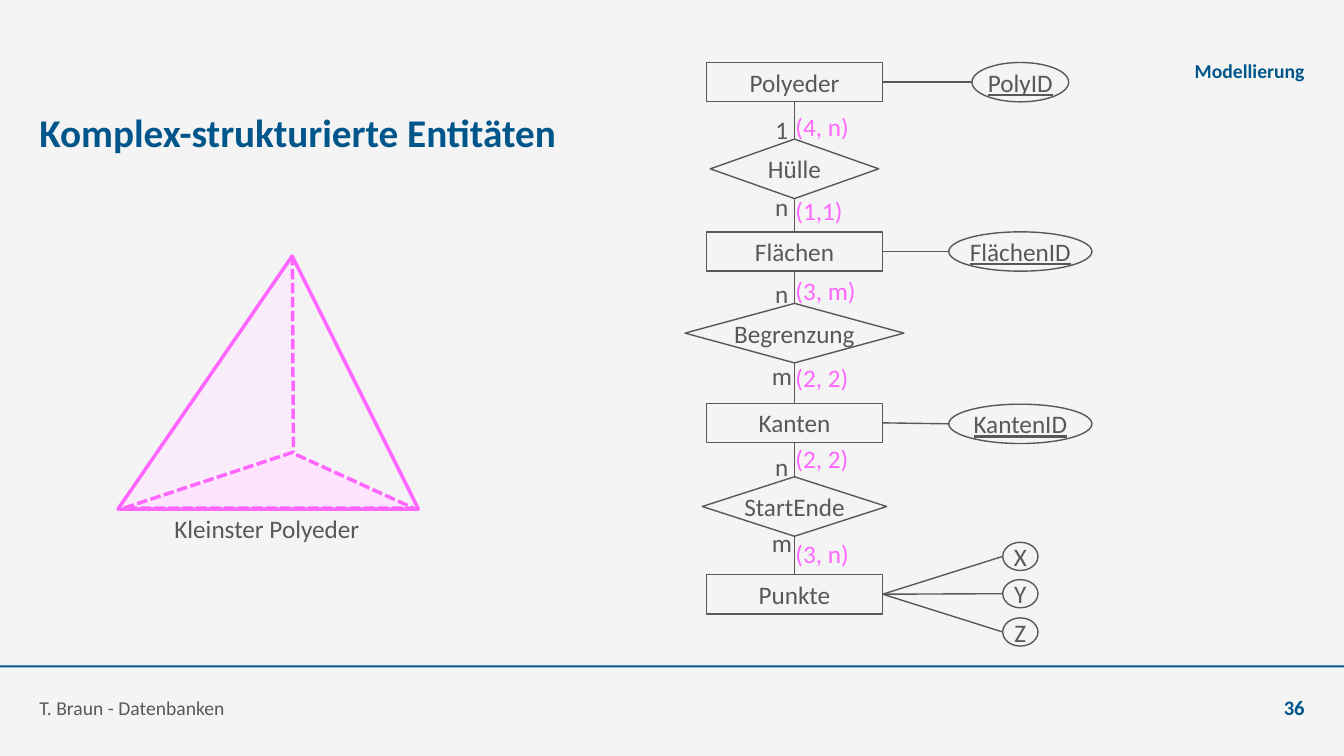
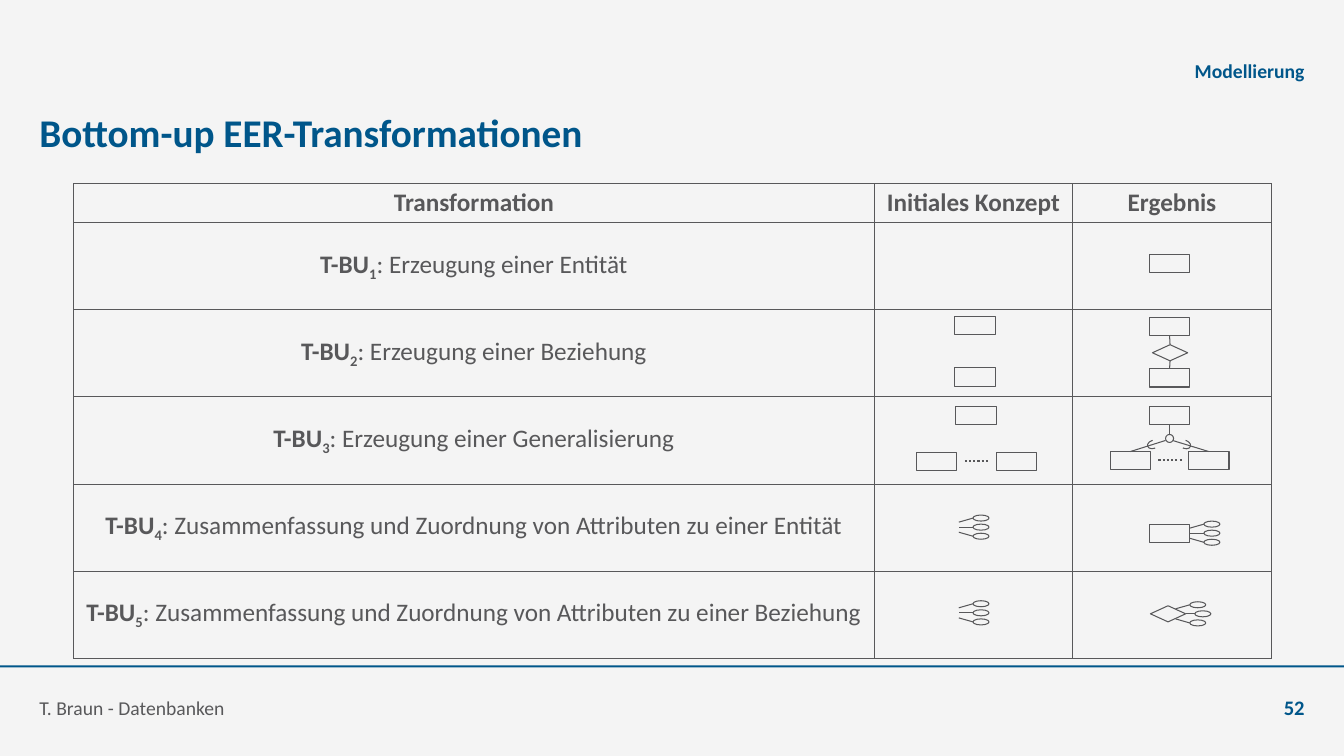
from lxml.etree import SubElement
from pptx import Presentation
from pptx.dml.color import RGBColor
from pptx.enum.dml import MSO_LINE_DASH_STYLE as DASH, MSO_PATTERN_TYPE as PATTERN
from pptx.enum.shapes import MSO_CONNECTOR, MSO_SHAPE as SHAPE
from pptx.enum.text import MSO_ANCHOR as ANCHOR, PP_ALIGN as ALIGN
from pptx.oxml.ns import qn
from pptx.util import Inches, Pt

FONT = "Calibri"
PAPER, BLUE, INK = "F4F4F4", "00568A", "58585A"
PINK, PALE_PINK = "FF66FF", "FFE4FF"
rgb = RGBColor.from_string


def put(slide, kind, left, top, width, height, text="", size=18, color=INK,
        bold=False, underline=False, align=ALIGN.CENTER, anchor=ANCHOR.MIDDLE,
        line=INK, weight=1.0, fill=None):
    """Add a preset shape, or a text box when kind is None."""
    box = [Inches(value) for value in (left, top, width, height)]
    if kind is None:
        shape = slide.shapes.add_textbox(*box)
    else:
        shape = slide.shapes.add_shape(kind, *box)
        shape.shadow.inherit = False
        if fill:
            shape.fill.solid()
            shape.fill.fore_color.rgb = rgb(fill)
        else:
            shape.fill.background()
        if line:
            shape.line.color.rgb = rgb(line)
            shape.line.width = Pt(weight)
        else:
            shape.line.fill.background()
    if text:
        frame = shape.text_frame
        frame.margin_left = frame.margin_right = frame.margin_top = frame.margin_bottom = 0
        frame.word_wrap = kind is None
        frame.vertical_anchor = anchor
        paragraph = frame.paragraphs[0]
        paragraph.alignment = align
        run = paragraph.add_run()
        run.text = text
        font = run.font
        font.name, font.size, font.bold, font.underline = FONT, Pt(size), bold, underline
        font.color.rgb = rgb(color)
    return shape


def add_line(slide, x1, y1, x2, y2, weight=1.0, color=INK, dash=None):
    connector = slide.shapes.add_connector(
        MSO_CONNECTOR.STRAIGHT, Inches(x1), Inches(y1), Inches(x2), Inches(y2))
    connector.line.color.rgb = rgb(color)
    connector.line.width = Pt(weight)
    if dash:
        connector.line.dash_style = dash
    SubElement(connector.element.spPr, qn("a:effectLst"))
    return connector


presentation = Presentation()
presentation.slide_width, presentation.slide_height = Inches(13.33), Inches(7.5)
background = presentation.slide_master.background.fill
background.solid()
background.fore_color.rgb = rgb(PAPER)

# Shared frame: band, title, chapter, footer, number
slides = []
for title_text, number in (("Komplex-strukturierte Entitäten", "36"),
                           ("Bottom-up EER-Transformationen", "52")):
    slide = presentation.slides.add_slide(presentation.slide_layouts[5])
    slides.append(slide)
    put(slide, SHAPE.RECTANGLE, 0, 6.6, 13.33, 0.02, line=None, fill=BLUE)
    title = slide.shapes.title
    title.left, title.top = Inches(0.39), Inches(0.99)
    title.width, title.height = Inches(12.55), Inches(0.63)
    frame = title.text_frame
    frame.margin_left = frame.margin_right = frame.margin_top = frame.margin_bottom = 0
    frame.vertical_anchor = ANCHOR.MIDDLE
    paragraph = frame.paragraphs[0]
    paragraph.alignment = ALIGN.LEFT
    run = paragraph.add_run()
    run.text = title_text
    run.font.name, run.font.size, run.font.bold = FONT, Pt(28), True
    run.font.color.rgb = rgb(BLUE)
    put(slide, None, 3.93, 0.43, 9.01, 0.39, "Modellierung", 14, BLUE, True,
        align=ALIGN.RIGHT, anchor=ANCHOR.BOTTOM)
    put(slide, None, 0.39, 6.75, 9.2, 0.39, "T. Braun - Datenbanken", 14,
        align=ALIGN.LEFT, anchor=ANCHOR.BOTTOM)
    put(slide, None, 12.15, 6.75, 0.79, 0.39, number, 14.7, BLUE, True,
        align=ALIGN.RIGHT, anchor=ANCHOR.BOTTOM)
polyhedron_slide, transformation_slide = slides

# Slide 1: tetrahedron, shaded faces first
slide = polyhedron_slide
for left, top, width, height, rotation, apex, pattern in (
        (1.8, 3.58, 2.72, 0.84, 243, 0.37, PATTERN.LARGE_CONFETTI),
        (1.01, 3.56, 2.97, 1.1, 124.5, 0.53, PATTERN.LIGHT_VERTICAL)):
    face = put(slide, SHAPE.ISOSCELES_TRIANGLE, left, top, width, height, line=None)
    face.adjustments[0] = apex
    face.rotation = rotation
    face.fill.patterned()
    face.fill.pattern = pattern
    face.fill.fore_color.rgb = rgb(PALE_PINK)
    face.fill.back_color.rgb = rgb(PAPER)
base = put(slide, SHAPE.ISOSCELES_TRIANGLE, 1.23, 4.49, 2.87, 0.55,
           line=PINK, weight=2.5, fill=PALE_PINK)
base.adjustments[0] = 0.58
base.line.dash_style = DASH.SQUARE_DOT
outline = put(slide, SHAPE.ISOSCELES_TRIANGLE, 1.17, 2.54, 2.98, 2.51, line=PINK, weight=2.5)
outline.adjustments[0] = 0.58
add_line(slide, 2.9, 2.53, 2.91, 4.49, 2.5, PINK, DASH.SQUARE_DOT)
put(slide, None, 1.73, 5.04, 2.06, 0.4, "Kleinster Polyeder", align=ALIGN.LEFT)

# Slide 1: chain of entities and relationships
axis = 7.88
chain = []
for name, kind, top, width, height in (
        ("Polyeder", SHAPE.RECTANGLE, 0.62, 1.75, 0.39),
        ("Hülle", SHAPE.DIAMOND, 1.38, 1.67, 0.59),
        ("Flächen", SHAPE.RECTANGLE, 2.3, 1.75, 0.39),
        ("Begrenzung", SHAPE.DIAMOND, 3.01, 2.17, 0.59),
        ("Kanten", SHAPE.RECTANGLE, 4, 1.75, 0.39),
        ("StartEnde", SHAPE.DIAMOND, 4.73, 1.83, 0.59),
        ("Punkte", SHAPE.RECTANGLE, 5.7, 1.75, 0.39)):
    chain.append(put(slide, kind, axis - width / 2, top, width, height, name))
for upper, lower in zip(chain, chain[1:]):
    link = add_line(slide, axis, 0, axis, 1)
    link.begin_connect(lower, 0)
    link.end_connect(upper, 2)

# Slide 1: cardinalities left and right of each link
for count, count_top, interval, interval_top in (
        ("1", 1.08, "(4, n)", 1.05), ("n", 1.85, "(1,1)", 1.89),
        ("n", 2.71, "(3, m)", 2.68), ("m", 3.52, "(2, 2)", 3.54),
        ("n", 4.43, "(2, 2)", 4.35), ("m", 5.18, "(3, n)", 5.29)):
    put(slide, None, 7.57, count_top, 0.37, 0.4, count)
    put(slide, None, 7.89, interval_top, 0.8, 0.4, interval, color=PINK, align=ALIGN.LEFT)

# Slide 1: attributes, keys underlined
polyeder, flaechen, kanten, punkte = chain[::2]
for owner, name, top, width, height, is_key in (
        (polyeder, "PolyID", 0.62, 0.96, 0.39, True),
        (flaechen, "FlächenID", 2.3, 1.42, 0.39, True),
        (kanten, "KantenID", 4.01, 1.42, 0.39, True),
        (punkte, "X", 5.38, 0.35, 0.28, False),
        (punkte, "Y", 5.75, 0.35, 0.28, False),
        (punkte, "Z", 6.13, 0.35, 0.28, False)):
    left = 10.12 - width / 2
    put(slide, SHAPE.OVAL, left, top, width, height, name, underline=is_key)
    add_line(slide, left, top + height / 2, 8.75, 0).end_connect(owner, 3)

# Slide 2: table of transformations
slide = transformation_slide
header = ("Transformation", "Initiales Konzept", "Ergebnis")
steps = (
    "Erzeugung einer Entität",
    "Erzeugung einer Beziehung",
    "Erzeugung einer Generalisierung",
    "Zusammenfassung und Zuordnung von Attributen zu einer Entität",
    "Zusammenfassung und Zuordnung von Attributen zu einer Beziehung")
rows = [[[(text, True, False)] for text in header]]
for index, step in enumerate(steps, 1):
    rows.append([[("T-BU", True, False), (str(index), True, True),
                  (f": {step}", False, False)], [], []])

table = slide.shapes.add_table(
    len(rows), len(header), Inches(0.73), Inches(1.82), Inches(11.87), Inches(4.71)).table
table.first_row = table.horz_banding = False
for column, width in zip(table.columns, (7.94, 1.97, 1.97)):
    column.width = Inches(width)
for index, row in enumerate(table.rows):
    row.height = Inches((4.71 - 0.39) / len(steps) if index else 0.39)
    for cell, runs in zip(row.cells, rows[index]):
        cell.margin_left = cell.margin_right = Inches(0.08)
        cell.margin_top = cell.margin_bottom = Inches(0.04)
        cell.vertical_anchor = ANCHOR.MIDDLE
        properties = cell._tc.get_or_add_tcPr()
        for side in ("a:lnL", "a:lnR", "a:lnT", "a:lnB"):
            border = SubElement(properties, qn(side), w=str(Pt(0.75)))
            SubElement(SubElement(border, qn("a:solidFill")), qn("a:srgbClr"), val=INK)
        cell.fill.background()
        paragraph = cell.text_frame.paragraphs[0]
        paragraph.alignment = ALIGN.CENTER
        for text, bold, subscript in runs:
            run = paragraph.add_run()
            run.text = text
            run.font.name, run.font.size, run.font.bold = FONT, Pt(18), bold
            run.font.color.rgb = rgb(INK)
            if subscript:
                run.font._element.set("baseline", "-25000")

# Slide 2: small entity boxes
thin = 0.75
entities = {}
for name, left, top in (
        ("new entity", 11.4, 2.52),
        ("first input", 9.47, 3.14), ("second input", 9.47, 3.65),
        ("first related", 11.4, 3.15), ("second related", 11.4, 3.66),
        ("loose parent", 9.48, 4.03), ("loose left", 9.09, 4.49), ("loose right", 9.88, 4.49),
        ("parent", 11.4, 4.03), ("left child", 11.01, 4.48), ("right child", 11.79, 4.48),
        ("owner", 11.4, 5.2)):
    entities[name] = put(slide, SHAPE.RECTANGLE, left, top, 0.4, 0.18, weight=thin)

# Slide 2: relationship between two entities
relationship = put(slide, SHAPE.DIAMOND, 11.43, 3.42, 0.35, 0.16, weight=thin)
for upper, lower in ((entities["first related"], relationship),
                     (relationship, entities["second related"])):
    link = add_line(slide, 11.6, 3.33, 11.6, 3.42, thin)
    link.begin_connect(upper, 2)
    link.end_connect(lower, 0)

# Slide 2: generalisation with subset arcs
put(slide, SHAPE.OVAL, 11.56, 4.31, 0.08, 0.08, weight=thin)
add_line(slide, 11.6, 4.31, 11.6, 4.21, thin).end_connect(entities["parent"], 2)
for child, start, arc_left, rotation in (("left child", 11.56, 11.38, 342),
                                         ("right child", 11.63, 11.7, 200)):
    add_line(slide, start, 4.37, 11.6, 4.48, thin).end_connect(entities[child], 0)
    arc = put(slide, SHAPE.ARC, arc_left, 4.37, 0.11, 0.08, weight=thin)
    arc.rotation = rotation
    for index, degrees in enumerate((75, 285)):
        arc.adjustments[index] = degrees * 0.6  # 60000 units a degree, scaled by 100000
for left, middle in ((9.57, 4.57), (11.49, 4.56)):
    add_line(slide, left, middle, left + 0.24, middle, 1.5, dash=DASH.ROUND_DOT)

# Slide 2: fans of three attributes
diamond_owner = put(slide, SHAPE.DIAMOND, 11.41, 6.01, 0.35, 0.16, weight=thin)
for left, middle, oval_shift, root_shift, owner in (
        (9.65, 5.23, 0, 0, None),
        (11.94, 5.29, 0, 0, entities["owner"]),
        (9.65, 6.08, 0, 0, None),
        (11.8, 6.09, 0.05, 0.1, diamond_owner)):
    for step in (-1, 0, 1):
        oval_left, root = left, left - 0.14
        if step == 0:
            oval_left, root = left + oval_shift, root + root_shift
        center = middle + step * 0.09
        put(slide, SHAPE.OVAL, oval_left, center - 0.03, 0.16, 0.06, weight=thin)
        stem = add_line(slide, oval_left, center, root, middle + step * 0.05, thin)
        if owner and step == 0:
            stem.end_connect(owner, 3)

presentation.save("out.pptx")
